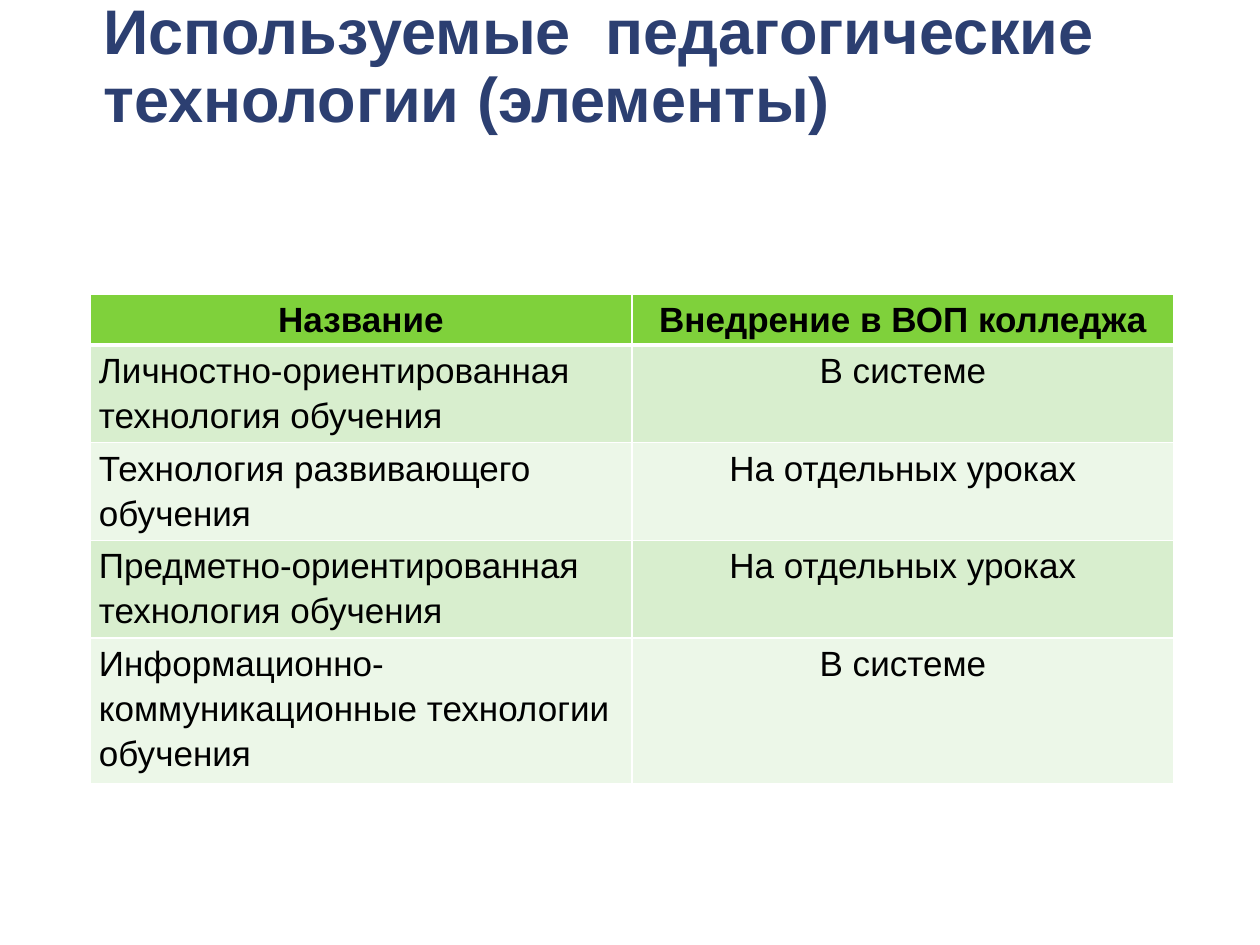
from lxml.etree import SubElement
from pptx import Presentation
from pptx.dml.color import RGBColor
from pptx.enum.text import MSO_ANCHOR as Anchor, PP_ALIGN as Align
from pptx.oxml.ns import qn
from pptx.util import Emu, Pt

PX = 914400 // 126


def write(frame, text, color, spacing, **font_format):
    """Fill a text frame with one paragraph and return the paragraph."""
    para = frame.paragraphs[0]
    para.line_spacing = spacing
    span = para.add_run()
    span.text = text
    span.font.color.rgb = RGBColor.from_string(color)
    for name, value in {"name": "Arial", **font_format}.items():
        setattr(span.font, name, value)
    return para


def add_border(cell, side, points):
    properties = cell._tc.get_or_add_tcPr()
    line = SubElement(properties, qn(f"a:{side}"), w=str(Pt(points)))
    fill = SubElement(line, qn("a:solidFill"))
    SubElement(fill, qn("a:srgbClr"), val="FFFFFF")


deck = Presentation()
deck.slide_width, deck.slide_height = Emu(1260 * PX), Emu(945 * PX)
page = deck.slides.add_slide(deck.slide_layouts[6])

# Title
title = page.shapes.add_textbox(91 * PX, 1 * PX, 1080 * PX, 135 * PX).text_frame
title.word_wrap = True
title.vertical_anchor = Anchor.MIDDLE
write(title, "Используемые  педагогические технологии (элементы)",
      "2C3F71", 0.9, size=Pt(36), bold=True)

# Table of technologies; rows grow to fit their text
rows = [
    ("Название", "Внедрение в ВОП колледжа"),
    ("Личностно-ориентированная технология обучения", "В системе"),
    ("Технология развивающего обучения", "На отдельных уроках"),
    ("Предметно-ориентированная технология обучения", "На отдельных уроках"),
    ("Информационно-коммуникационные технологии обучения", "В системе"),
]
HEADER_FILL = "7FD13B"
BAND_FILLS = ["ECF7E8", "D8EECE"]
CELL_FORMAT = {
    "margin_left": 9 * PX, "margin_right": 9 * PX,
    "margin_top": 1 * PX, "margin_bottom": 0,
    "vertical_anchor": Anchor.TOP,
}

table = page.shapes.add_table(
    len(rows), 2, 90 * PX, 294 * PX, 1084 * PX, len(rows) * 51 * PX).table

for row_index, row in enumerate(rows):
    is_header = row_index == 0
    for column_index, text in enumerate(row):
        cell = table.cell(row_index, column_index)
        for name, value in CELL_FORMAT.items():
            setattr(cell, name, value)
        for side in ("lnL", "lnR", "lnT", "lnB"):
            under_header = (row_index, side) in ((0, "lnB"), (1, "lnT"))
            add_border(cell, side, 3 if under_header else 1)
        cell.fill.solid()
        cell.fill.fore_color.rgb = RGBColor.from_string(
            HEADER_FILL if is_header else BAND_FILLS[row_index % 2])
        para = write(cell.text_frame, text, "000000", 1.15,
                     size=Pt(20), bold=is_header)
        centered = is_header or column_index == 1
        para.alignment = Align.CENTER if centered else Align.LEFT

deck.save("out.pptx")
